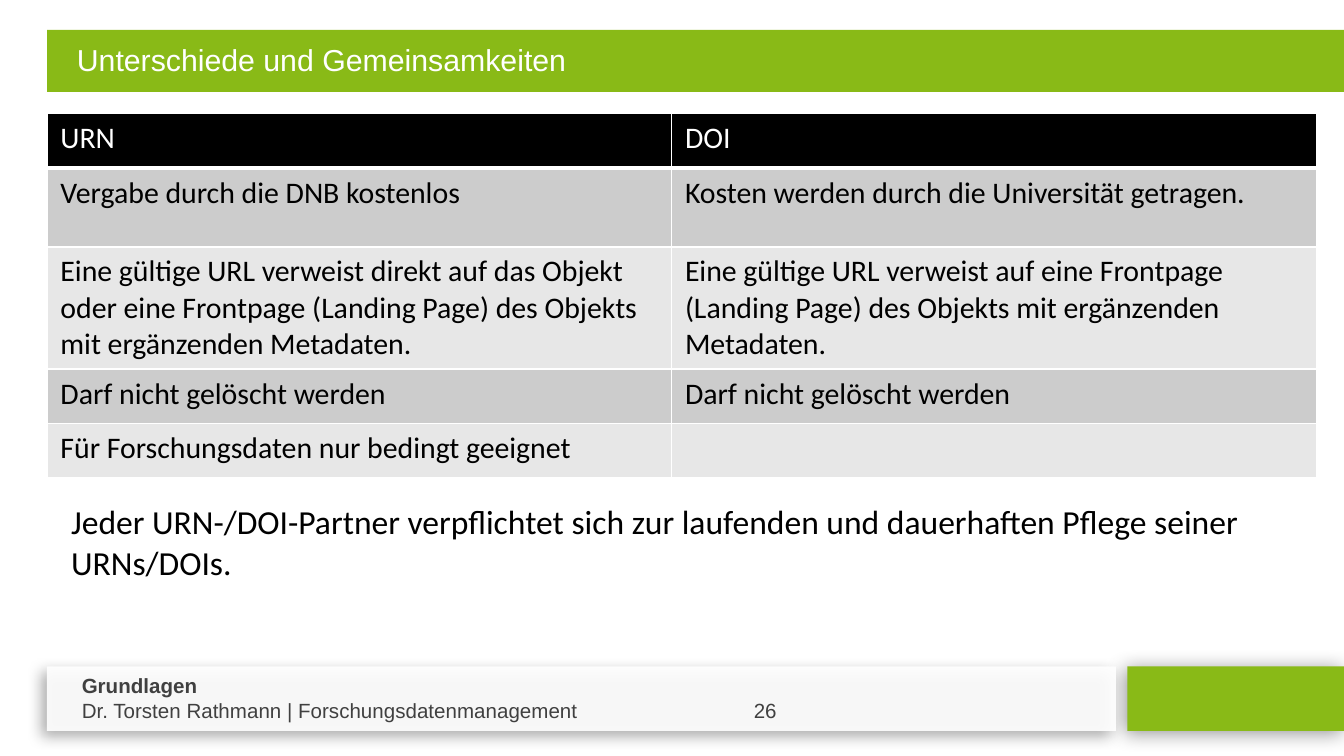
from lxml import etree
from pptx import Presentation
from pptx.dml.color import RGBColor
from pptx.enum.shapes import MSO_SHAPE
from pptx.oxml import parse_xml
from pptx.util import Pt

RECT = MSO_SHAPE.RECTANGLE
NS = "http://schemas.openxmlformats.org/drawingml/2006/main"
GREEN, WHITE, BLACK, GREY = "89BA17", "FFFFFF", "000000", "404040"
LEFT = 25.2

color = RGBColor.from_string


def write(frame, text, size=16, font="Calibri", fill=BLACK, bold=False, more=False):
    para = frame.add_paragraph() if more else frame.paragraphs[0]
    run = para.add_run()
    run.text = text
    run.font.size = Pt(size)
    run.font.name = font
    run.font.bold = bold
    run.font.color.rgb = color(fill)
    return para


def box(x, y, wide, high):
    frame = slide.shapes.add_textbox(Pt(x), Pt(y), Pt(wide), Pt(high)).text_frame
    frame.word_wrap = True
    return frame


deck = Presentation()
deck.slide_width, deck.slide_height = Pt(720), Pt(405)
slide = deck.slides.add_slide(deck.slide_layouts[6])

# Bars: x, y, width, height, fill, shadow (opacity, blur, distance, angle)
bars = [
    (604, 357, 116, 34.6, GREEN, (42, 10.8, 2, 142)),
    (LEFT, 357, 572.6, 34.6, WHITE, (34, 7.5, 4, 145)),
    (LEFT, 16, 694.8, 33.3, GREEN, None),
]
for x, y, wide, high, fill, shade in bars:
    bar = slide.shapes.add_shape(RECT, Pt(x), Pt(y), Pt(wide), Pt(high))
    bar.shadow.inherit = False
    bar.line.fill.background()
    bar.fill.solid()
    bar.fill.fore_color.rgb = color(fill)
    props = bar._element.spPr
    if fill == WHITE:
        tint = props.find(f".//{{{NS}}}srgbClr")
        etree.SubElement(tint, f"{{{NS}}}alpha", val="91000")
    if shade:
        alpha, blur, dist, angle = shade
        props.find(f"{{{NS}}}effectLst").append(parse_xml(
            f'<a:outerShdw xmlns:a="{NS}" blurRad="{Pt(blur)}" dist="{Pt(dist)}" '
            f'dir="{angle * 60000}" algn="ctr" rotWithShape="0">'
            f'<a:srgbClr val="{BLACK}"><a:alpha val="{alpha * 1000}"/></a:srgbClr>'
            '</a:outerShdw>'))

# Title
title = box(LEFT, 16, 694.8, 25)
title.margin_left, title.margin_top = Pt(16), Pt(6)
write(title, "Unterschiede und Gemeinsamkeiten", size=16.2, font="Arial", fill=WHITE)

# Footer with the page number on the last tab stop
foot = box(36.7, 357, 430.6, 33.8)
write(foot, "Grundlagen", size=11, font="Arial", fill=GREY, bold=True)
line = write(foot, "Dr. Torsten Rathmann | Forschungsdatenmanagement\t\t\t26",
             size=11, font="Arial", fill=GREY, more=True)
stops = etree.SubElement(line._p.get_or_add_pPr(), f"{{{NS}}}tabLst")
for stop in (288, 324, 360):
    etree.SubElement(stops, f"{{{NS}}}tab", pos=str(Pt(stop)), algn="l")

# Comparison table
rows = [
    ("URN", "DOI"),
    ("Vergabe durch die DNB kostenlos",
     "Kosten werden durch die Universität getragen."),
    ("Eine gültige URL verweist direkt auf das Objekt oder eine Frontpage "
     "(Landing Page) des Objekts mit ergänzenden Metadaten.",
     "Eine gültige URL verweist auf eine Frontpage (Landing Page) des Objekts "
     "mit ergänzenden Metadaten."),
    ("Darf nicht gelöscht werden", "Darf nicht gelöscht werden"),
    ("Für Forschungsdaten nur bedingt geeignet", ""),
]
highs = [29.2, 42.2, 65.6, 29.2, 29.2]
wides = [334.6, 345.6]
table = slide.shapes.add_table(len(rows), len(wides), Pt(LEFT), Pt(60.8),
                               Pt(sum(wides)), Pt(sum(highs))).table
for col, wide in zip(table.columns, wides):
    col.width = Pt(wide)
for r, (texts, high) in enumerate(zip(rows, highs)):
    table.rows[r].height = Pt(high)
    for c, text in enumerate(texts):
        cell = table.cell(r, c)
        if text:
            write(cell.text_frame, text, fill=BLACK if r else WHITE)
        props = cell._tc.get_or_add_tcPr()
        for side in "LRTB":
            thick = 3 if (r, side) in ((0, "B"), (1, "T")) else 1
            props.append(parse_xml(
                f'<a:ln{side} xmlns:a="{NS}" w="{Pt(thick)}"><a:solidFill>'
                f'<a:srgbClr val="{WHITE}"/></a:solidFill></a:ln{side}>'))
        cell.fill.solid()
        cell.fill.fore_color.rgb = color(
            BLACK if r == 0 else "CCCCCC" if r % 2 else "E7E7E7")

# Closing remark
write(box(31, 265, 669, 51),
      "Jeder URN-/DOI-Partner verpflichtet sich zur laufenden und dauerhaften "
      "Pflege seiner URNs/DOIs.", size=18)

deck.save("out.pptx")
